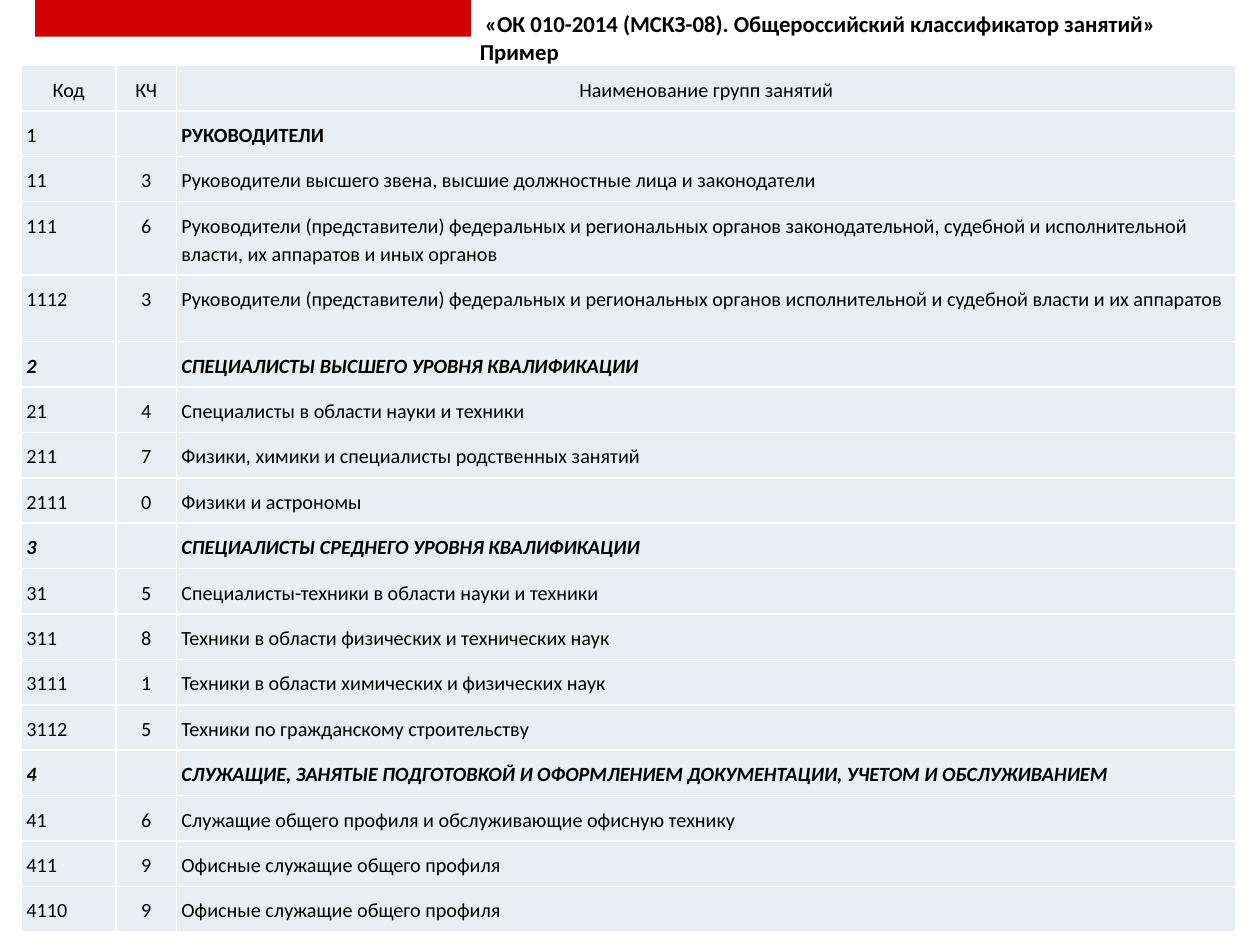
"""Build a slide with an extract from the classifier of occupations."""
from lxml.etree import SubElement
from pptx import Presentation
from pptx.dml.color import RGBColor
from pptx.enum.shapes import MSO_SHAPE as SHAPE
from pptx.enum.text import MSO_AUTO_SIZE as AUTO, PP_ALIGN as ALIGN
from pptx.oxml.ns import qn
from pptx.util import Inches, Pt


def paint(fill, color):
    fill.solid()
    fill.fore_color.rgb = RGBColor.from_string(color)


def style(p, size, bold=False, italic=False):
    f = p.font
    f.name, f.size, f.bold, f.italic = "Calibri", Pt(size), bold, italic
    paint(f.fill, "000000")


rows = [
    ("Код", "КЧ", "Наименование групп занятий"),
    ("1", "", "РУКОВОДИТЕЛИ"),
    ("11", "3", "Руководители высшего звена, высшие должностные лица и законодатели"),
    ("111", "6", "Руководители (представители) федеральных и региональных органов "
     "законодательной, судебной и исполнительной власти, их аппаратов и иных органов"),
    ("1112", "3", "Руководители (представители) федеральных и региональных органов "
     "исполнительной и судебной власти и их аппаратов"),
    ("2", "", "СПЕЦИАЛИСТЫ ВЫСШЕГО УРОВНЯ КВАЛИФИКАЦИИ"),
    ("21", "4", "Специалисты в области науки и техники"),
    ("211", "7", "Физики, химики и специалисты родственных занятий"),
    ("2111", "0", "Физики и астрономы"),
    ("3", "", "СПЕЦИАЛИСТЫ СРЕДНЕГО УРОВНЯ КВАЛИФИКАЦИИ"),
    ("31", "5", "Специалисты-техники в области науки и техники"),
    ("311", "8", "Техники в области физических и технических наук"),
    ("3111", "1", "Техники в области химических и физических наук"),
    ("3112", "5", "Техники по гражданскому строительству"),
    ("4", "", "СЛУЖАЩИЕ, ЗАНЯТЫЕ ПОДГОТОВКОЙ И ОФОРМЛЕНИЕМ ДОКУМЕНТАЦИИ, "
     "УЧЕТОМ И ОБСЛУЖИВАНИЕМ"),
    ("41", "6", "Служащие общего профиля и обслуживающие офисную технику"),
    ("411", "9", "Офисные служащие общего профиля"),
    ("4110", "9", "Офисные служащие общего профиля"),
]
tall_rows = ("111", "1112")

prs = Presentation()
prs.slide_width, prs.slide_height = Inches(10), Inches(7.5)
s = prs.slides.add_slide(prs.slide_layouts[6])

bar = s.shapes.add_shape(SHAPE.RECTANGLE, Inches(0.28), 0, Inches(3.46), Inches(0.29))
bar.shadow.inherit = False
paint(bar.fill, "D00000")
bar.line.fill.background()

sp = s.shapes.add_textbox(Inches(3.71), Inches(0.03), Inches(6.17), Inches(0.54))
tf = sp.text_frame
tf.word_wrap = True
tf.auto_size = AUTO.SHAPE_TO_FIT_TEXT
tf.text = " «ОК 010-2014 (МСКЗ-08). Общероссийский классификатор занятий»\nПример"
for p in tf.paragraphs:
    style(p, 13, bold=True)

table = s.shapes.add_table(len(rows), 3, Inches(0.17), Inches(0.52),
                           Inches(9.63), Inches(6.69)).table
table.first_row = table.horz_banding = False
for column, width in zip(table.columns, (0.75, 0.48, 8.41)):
    column.width = Inches(width)

for i, row in enumerate(rows):
    code = row[0]
    table.rows[i].height = Inches(0.53 if code in tall_rows else 0.33)
    for j, text in enumerate(row):
        cell = table.cell(i, j)
        cell.margin_left = cell.margin_right = Inches(0.04)
        cell.margin_top = cell.margin_bottom = Inches(0.07)
        cell.text = text
        p = cell.text_frame.paragraphs[0]
        p.line_spacing = 1.15
        p.alignment = ALIGN.CENTER if i == 0 or j == 1 else ALIGN.LEFT
        group = len(code) == 1
        style(p, 11.5, bold=group and (code, j) != ("1", 0), italic=group and code != "1")
        SubElement(p._p, qn("a:endParaRPr"), sz="1150")
        for side in ("a:lnL", "a:lnR", "a:lnT", "a:lnB"):
            ln = SubElement(cell._tc.get_or_add_tcPr(), qn(side), w=str(Pt(1)))
            SubElement(SubElement(ln, qn("a:solidFill")), qn("a:srgbClr"), val="FFFFFF")
        paint(cell.fill, "E9EDF4")

prs.save("out.pptx")
